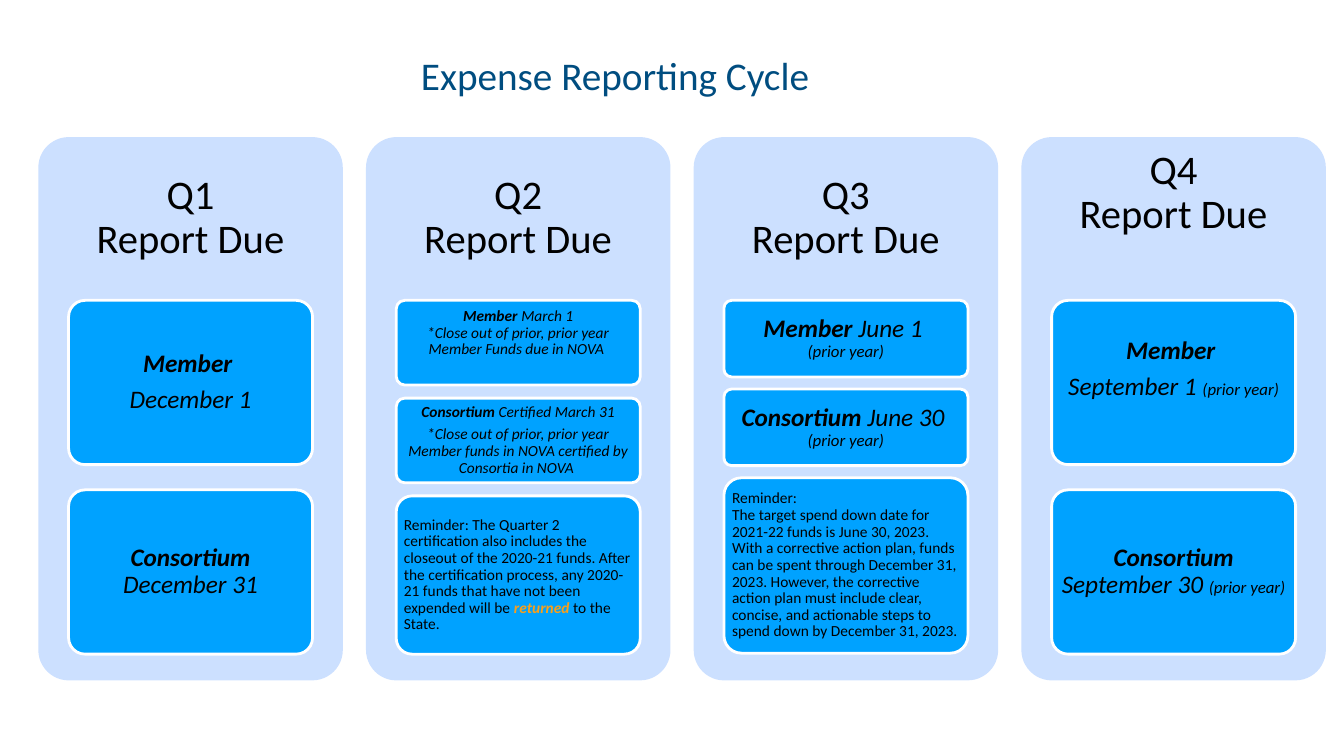
from dataclasses import dataclass

from pptx import Presentation
from pptx.dml.color import RGBColor
from pptx.enum.shapes import MSO_SHAPE
from pptx.enum.text import MSO_ANCHOR, PP_ALIGN
from pptx.util import Inches, Pt

ROUNDED = MSO_SHAPE.ROUNDED_RECTANGLE
TOP, MIDDLE = MSO_ANCHOR.TOP, MSO_ANCHOR.MIDDLE
LEFT, CENTER = PP_ALIGN.LEFT, PP_ALIGN.CENTER


@dataclass(frozen=True)
class Theme:
    font: str = "Calibri"
    title: str = "004D80"
    text: str = "000000"
    accent: str = "F99F1A"
    panel: str = "CCE0FF"
    card: str = "00A2FF"
    outline: str = "FFFFFF"
    title_size: int = 28
    heading_size: int = 29
    date_size: int = 18
    aside_size: int = 12
    note_size: int = 11


THEME = Theme()


@dataclass(frozen=True)
class Span:
    text: str
    bold: bool = False
    size: int | None = None
    color: str | None = None
    italic: bool | None = None


@dataclass(frozen=True)
class Card:
    height: float
    paragraphs: list[list[Span]]
    size: int = THEME.date_size
    italic: bool = True
    align: PP_ALIGN = CENTER
    lift: float = 0  # extra bottom margin that raises the text


@dataclass(frozen=True)
class Quarter:
    name: str
    gap: float
    cards: list[Card]
    heading_anchor: MSO_ANCHOR = MIDDLE


def due(who: str, when: str, aside: str = "") -> list[Span]:
    spans = [Span(who, bold=True), Span(when)]
    return spans + [Span(aside, size=THEME.aside_size)] if aside else spans


def reminder(height: float, *spans: Span) -> Card:
    return Card(height, [list(spans)], THEME.note_size, italic=False, align=LEFT)


PRIOR = "(prior year)"
QUARTERS = [
    Quarter("Q1", 0.25, [
        Card(1.63, [[Span("Member ", bold=True)], [Span("December 1")]]),
        Card(1.63, [due("Consortium", " December 31")]),
    ]),
    Quarter("Q2", 0.13, [
        Card(0.84, [due("Member", " March 1\n*Close out of prior, prior year "
                        "Member Funds due in NOVA ")], THEME.note_size, lift=0.19),
        Card(0.84, [due("Consortium", " Certified March 31"),
                    [Span("*Close out of prior, prior year Member funds in NOVA "
                          "certified by Consortia in NOVA ")]], THEME.note_size),
        reminder(1.57,
                 Span("Reminder: The Quarter 2 certification also includes the closeout "
                      "of the 2020-21 funds. After the certification process, any "
                      "2020-21 funds that have not been expended will be "),
                 Span("returned", bold=True, color=THEME.accent, italic=True),
                 Span(" to the State.")),
    ]),
    Quarter("Q3", 0.12, [
        Card(0.76, [due("Member", " June 1 \n", PRIOR)]),
        Card(0.76, [due("Consortium", " June 30 \n", PRIOR)]),
        reminder(1.74,
                 Span("Reminder:\nThe target spend down date for 2021-22 funds is "
                      "June 30, 2023. With a corrective action plan, funds can be spent "
                      "through December 31, 2023. However, the corrective action plan "
                      "must include clear, concise, and actionable steps to spend down "
                      "by December 31, 2023.")),
    ]),
    Quarter("Q4", 0.25, [
        Card(1.63, [[Span("Member ", bold=True)],
                    [Span("September 1 "), Span(PRIOR, size=THEME.aside_size)]], lift=0.26),
        Card(1.63, [due("Consortium", " September 30 ", PRIOR + " ")]),
    ], heading_anchor=TOP),
]

# Column geometry in inches
COLUMN_LEFT, COLUMN_TOP, COLUMN_PITCH = 0.38, 1.36, 3.25
COLUMN_WIDTH, COLUMN_HEIGHT, HEADING_HEIGHT = 3.02, 5.39, 1.62
CARD_INDENT, CARD_WIDTH = 0.3, 2.42


def add_span(paragraph, span: Span) -> None:
    for index, line in enumerate(span.text.split("\n")):
        if index:
            paragraph.add_line_break()
        if not line:
            continue
        run = paragraph.add_run()
        run.text = line
        if span.bold:
            run.font.bold = True
        if span.italic is not None:
            run.font.italic = span.italic
        if span.size:
            run.font.size = Pt(span.size)
        if span.color:
            run.font.color.rgb = RGBColor.from_string(span.color)


def write(shape, paragraphs: list[list[Span]], size: int, margins: tuple[float, float],
          color: str = THEME.text, italic: bool = False, align: PP_ALIGN = CENTER,
          anchor: MSO_ANCHOR = MIDDLE, lift: float = 0) -> None:
    frame = shape.text_frame
    frame.word_wrap = True
    frame.vertical_anchor = anchor
    side, edge = margins
    frame.margin_left = frame.margin_right = Inches(side)
    frame.margin_top, frame.margin_bottom = Inches(edge), Inches(edge + lift)
    for index, spans in enumerate(paragraphs):
        paragraph = frame.add_paragraph() if index else frame.paragraphs[0]
        paragraph.alignment = align
        paragraph.line_spacing = 0.9
        paragraph.space_after = Pt(0.35 * size)
        font = paragraph.font
        font.name, font.size, font.italic = THEME.font, Pt(size), italic
        font.color.rgb = RGBColor.from_string(color)
        for span in spans:
            add_span(paragraph, span)


def add_text_box(slide, left: float, top: float, width: float, height: float):
    return slide.shapes.add_textbox(Inches(left), Inches(top), Inches(width), Inches(height))


def add_rounded(slide, left: float, top: float, width: float, height: float,
                fill: str, outline: str | None = None):
    shape = slide.shapes.add_shape(ROUNDED, Inches(left), Inches(top),
                                   Inches(width), Inches(height))
    shape.adjustments[0] = 0.1
    shape.shadow.inherit = False
    shape.fill.solid()
    shape.fill.fore_color.rgb = RGBColor.from_string(fill)
    if outline:
        shape.line.color.rgb = RGBColor.from_string(outline)
        shape.line.width = Pt(2)
    else:
        shape.line.fill.background()
    return shape


def add_quarter(slide, quarter: Quarter, left: float) -> None:
    # Panel and heading
    add_rounded(slide, left, COLUMN_TOP, COLUMN_WIDTH, COLUMN_HEIGHT, THEME.panel)
    heading = add_text_box(slide, left, COLUMN_TOP, COLUMN_WIDTH, HEADING_HEIGHT)
    write(heading, [[Span(f"{quarter.name}\nReport Due")]], THEME.heading_size,
          (0.12, 0.12), anchor=quarter.heading_anchor)

    # Stack of cards
    top = COLUMN_TOP + HEADING_HEIGHT
    for card in quarter.cards:
        deadline = add_rounded(slide, left + CARD_INDENT, top, CARD_WIDTH, card.height,
                               THEME.card, THEME.outline)
        margins = (0.03, 0.02) if card.size == THEME.note_size else (0.05, 0.04)
        write(deadline, card.paragraphs, card.size, margins, italic=card.italic,
              align=card.align, lift=card.lift)
        top += card.height + quarter.gap


def main() -> None:
    deck = Presentation()
    deck.slide_width, deck.slide_height = Inches(13.33), Inches(7.5)
    slide = deck.slides.add_slide(deck.slide_layouts[6])

    # Title
    title = add_text_box(slide, 0.92, 0.4, 10.36, 0.74)
    write(title, [[Span("Expense Reporting Cycle")]], THEME.title_size, (0.06, 0.06),
          color=THEME.title)

    # Quarter columns
    for index, quarter in enumerate(QUARTERS):
        add_quarter(slide, quarter, COLUMN_LEFT + index * COLUMN_PITCH)

    deck.save("out.pptx")


if __name__ == "__main__":
    main()
